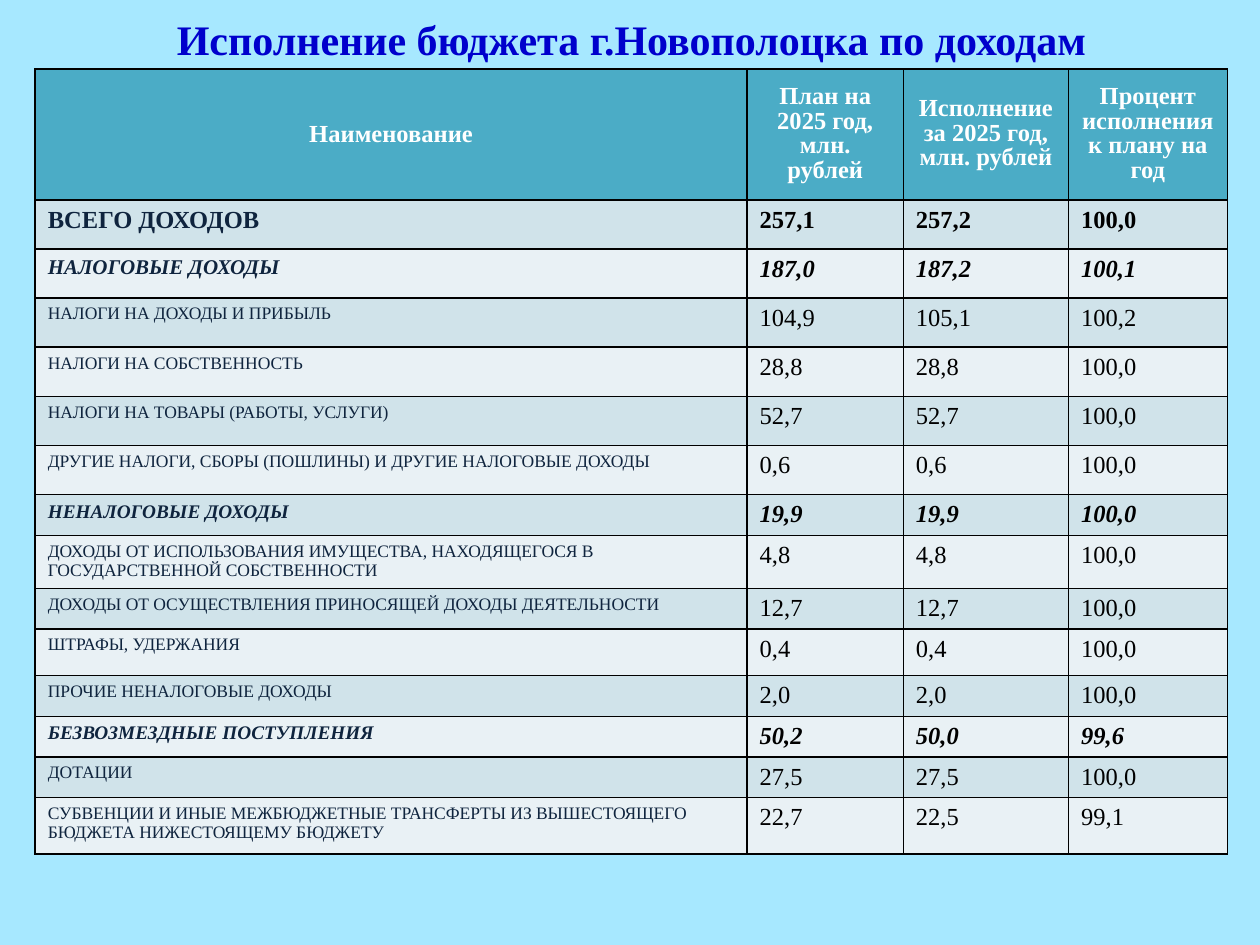
from dataclasses import dataclass

from lxml import etree
from pptx import Presentation
from pptx import util as u
from pptx.dml.color import RGBColor
from pptx.enum import text
from pptx.oxml import ns


@dataclass(frozen=True)
class Theme:
    """Colours, font and type sizes of the slide."""
    font: str = "Times New Roman"
    background: str = "A7E8FF"
    title: str = "0000CC"
    header: str = "4BACC6"
    header_text: str = "FFFFFF"
    bands: tuple = ("D0E3EA", "E9F1F5")
    label: str = "0F243E"
    value: str = "000000"
    border: str = "000000"
    title_size: int = 24
    table_size: int = 14
    group_size: int = 12
    subgroup_size: int = 11
    item_size: int = 10


THEME = Theme()
TOTAL = (THEME.table_size, True, False)
GROUP = (THEME.group_size, True, True)
SUBGROUP = (THEME.subgroup_size, True, True)
ITEM = (THEME.item_size, False, False)

HEADINGS = ["Наименование", "План на 2025 год, млн. рублей",
            "Исполнение за 2025 год, млн. рублей", "Процент исполнения к плану на год"]
COLUMNS = [14.35, 3.15, 3.33, 3.2]
HEADER_HEIGHT = 2.64
INCOME = [
    (TOTAL, 0.99, "ВСЕГО ДОХОДОВ", "257,1", "257,2", "100,0"),
    (GROUP, 0.99, "НАЛОГОВЫЕ ДОХОДЫ", "187,0", "187,2", "100,1"),
    (ITEM, 0.99, "НАЛОГИ НА ДОХОДЫ И ПРИБЫЛЬ", "104,9", "105,1", "100,2"),
    (ITEM, 0.99, "НАЛОГИ НА СОБСТВЕННОСТЬ", "28,8", "28,8", "100,0"),
    (ITEM, 0.99, "НАЛОГИ НА ТОВАРЫ (РАБОТЫ, УСЛУГИ)", "52,7", "52,7", "100,0"),
    (ITEM, 0.99, "ДРУГИЕ НАЛОГИ, СБОРЫ (ПОШЛИНЫ) И ДРУГИЕ НАЛОГОВЫЕ ДОХОДЫ",
     "0,6", "0,6", "100,0"),
    (SUBGROUP, 0.82, "НЕНАЛОГОВЫЕ ДОХОДЫ", "19,9", "19,9", "100,0"),
    (ITEM, 1.07, "ДОХОДЫ ОТ ИСПОЛЬЗОВАНИЯ ИМУЩЕСТВА, НАХОДЯЩЕГОСЯ В "
     "ГОСУДАРСТВЕННОЙ СОБСТВЕННОСТИ", "4,8", "4,8", "100,0"),
    (ITEM, 0.82, "ДОХОДЫ ОТ ОСУЩЕСТВЛЕНИЯ ПРИНОСЯЩЕЙ ДОХОДЫ ДЕЯТЕЛЬНОСТИ",
     "12,7", "12,7", "100,0"),
    (ITEM, 0.94, "ШТРАФЫ, УДЕРЖАНИЯ", "0,4", "0,4", "100,0"),
    (ITEM, 0.82, "ПРОЧИЕ НЕНАЛОГОВЫЕ ДОХОДЫ", "2,0", "2,0", "100,0"),
    (SUBGROUP, 0.82, "БЕЗВОЗМЕЗДНЫЕ ПОСТУПЛЕНИЯ", "50,2", "50,0", "99,6"),
    (ITEM, 0.82, "ДОТАЦИИ", "27,5", "27,5", "100,0"),
    (ITEM, 1.14, "СУБВЕНЦИИ И ИНЫЕ МЕЖБЮДЖЕТНЫЕ ТРАНСФЕРТЫ ИЗ ВЫШЕСТОЯЩЕГО "
     "БЮДЖЕТА НИЖЕСТОЯЩЕМУ БЮДЖЕТУ", "22,7", "22,5", "99,1"),
]


def add_run(p, words, size, color, bold=False, italic=False):
    """Add one formatted run to a paragraph."""
    r = p.add_run()
    r.text = words
    r.font.name = THEME.font
    r.font.size = u.Pt(size)
    r.font.color.rgb = RGBColor.from_string(color)
    r.font.bold = bold
    r.font.italic = italic


def format_cell(cell, color):
    """Give a cell its four borders and its fill."""
    props = cell._tc.get_or_add_tcPr()
    for side in ("a:lnL", "a:lnR", "a:lnT", "a:lnB"):
        line = etree.SubElement(props, ns.qn(side), w=str(u.Pt(1)))
        fill = etree.SubElement(line, ns.qn("a:solidFill"))
        etree.SubElement(fill, ns.qn("a:srgbClr"), val=THEME.border)
    cell.fill.solid()
    cell.fill.fore_color.rgb = RGBColor.from_string(color)


def place_title(s, words, left, top, width, height):
    """Place and format the slide title."""
    sp = s.shapes.title
    sp.left, sp.top, sp.width, sp.height = left, top, width, height
    tf = sp.text_frame
    tf.word_wrap = True
    tf.auto_size = text.MSO_AUTO_SIZE.NONE
    tf.vertical_anchor = text.MSO_ANCHOR.MIDDLE
    p = tf.paragraphs[0]
    p.alignment = text.PP_ALIGN.CENTER
    p.line_spacing = u.Pt(44)
    add_run(p, words, THEME.title_size, THEME.title, bold=True)


def fill_header(table):
    """Write the column headings."""
    for i, heading in enumerate(HEADINGS):
        cell = table.cell(0, i)
        format_cell(cell, THEME.header)
        cell.vertical_anchor = text.MSO_ANCHOR.MIDDLE
        p = cell.text_frame.paragraphs[0]
        p.alignment = text.PP_ALIGN.CENTER
        if i:
            p.line_spacing = u.Pt(14)
        add_run(p, heading, THEME.table_size, THEME.header_text, bold=True)


def place_income_table(s, left, top):
    """Build the income table from its top left corner."""
    heights = [HEADER_HEIGHT] + [row[1] for row in INCOME]
    table = s.shapes.add_table(len(heights), len(COLUMNS), left, top,
                               u.Cm(sum(COLUMNS)), u.Cm(sum(heights))).table
    for column, width in zip(table.columns, COLUMNS):
        column.width = u.Cm(width)
    for row, height in zip(table.rows, heights):
        row.height = u.Cm(height)
    fill_header(table)
    for i, ((label_size, bold, italic), _, *words) in enumerate(INCOME):
        for j, word in enumerate(words):
            cell = table.cell(i + 1, j)
            format_cell(cell, THEME.bands[i % 2])
            size, color = (THEME.table_size, THEME.value) if j else (label_size, THEME.label)
            add_run(cell.text_frame.paragraphs[0], word, size, color, bold, italic)


def main():
    """Build and save the presentation."""
    prs = Presentation()
    prs.slide_width, prs.slide_height = u.Cm(25.4), u.Cm(19.05)
    s = prs.slides.add_slide(prs.slide_layouts[5])
    s.background.fill.solid()
    s.background.fill.fore_color.rgb = RGBColor.from_string(THEME.background)
    place_title(s, "Исполнение бюджета г.Новополоцка по доходам",
                u.Cm(1.3), u.Cm(0.1), u.Cm(22.86), u.Cm(0.81))
    place_income_table(s, u.Cm(0.71), u.Cm(1.39))
    prs.save("out.pptx")


if __name__ == "__main__":
    main()
